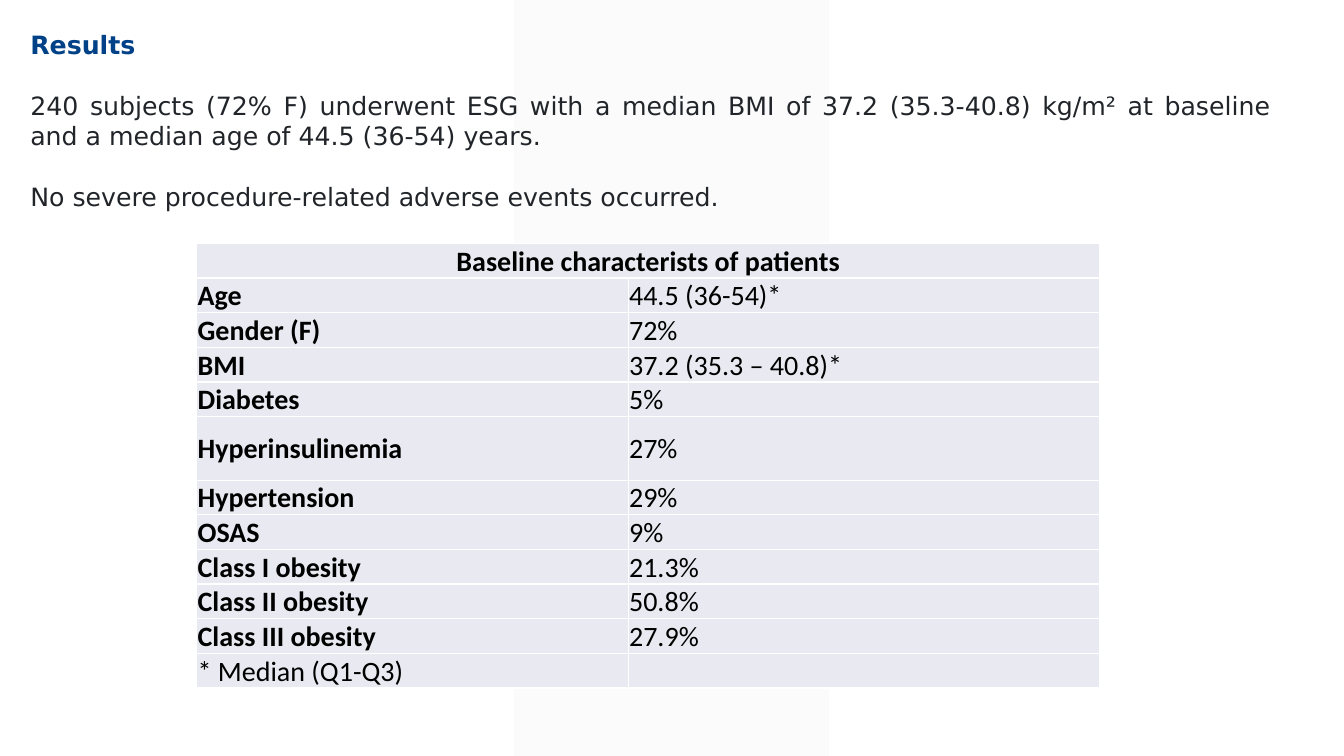
from lxml.etree import SubElement
from pptx import Presentation
from pptx.dml.color import RGBColor
from pptx.enum.shapes import MSO_SHAPE as Shape
from pptx.enum.text import MSO_ANCHOR as Anchor, PP_ALIGN as Align
from pptx.oxml.ns import qn
from pptx.util import Inches, Pt

COLORS = {
    "band": "F2F2F2",
    "heading": "004187",
    "body": "212529",
    "cell": "E9EAF1",
    "border": "FFFFFF",
    "table_text": "000000",
}
TABLE_TITLE = "Baseline characterists of patients"
CHARACTERISTICS = [
    ("Age", "44.5 (36-54)*"),
    ("Gender (F)", "72%"),
    ("BMI", "37.2 (35.3 – 40.8)*"),
    ("Diabetes", "5%"),
    ("Hyperinsulinemia", "27%"),
    ("Hypertension", "29%"),
    ("OSAS", "9%"),
    ("Class I obesity", "21.3%"),
    ("Class II obesity", "50.8%"),
    ("Class III obesity", "27.9%"),
]
FOOTNOTE = "* Median (Q1-Q3)"


def rgb(name):
    return RGBColor.from_string(COLORS[name])


def write(paragraph, text, *, font, size, color, bold=False,
          align=Align.LEFT, before=0):
    paragraph.alignment = align
    paragraph.space_before = Pt(before)
    run = paragraph.add_run()
    run.text = text
    run.font.name = font
    run.font.size = Pt(size)
    run.font.bold = bold
    run.font.color.rgb = rgb(color)


def set_insets(target, left, top, right, bottom):
    target.margin_left, target.margin_top = Inches(left), Inches(top)
    target.margin_right, target.margin_bottom = Inches(right), Inches(bottom)


class ResultsSlide:
    """Places elements by percentages of the slide's width and height."""

    body_style = dict(font="DejaVu Sans", size=18, color="body")
    table_style = dict(font="Calibri", size=20, color="table_text")

    def __init__(self, deck):
        self.deck = deck
        self.slide = deck.slides.add_slide(deck.slide_layouts[6])

    def across(self, percent):
        return round(self.deck.slide_width * percent / 100)

    def down(self, percent):
        return round(self.deck.slide_height * percent / 100)

    def box(self, x, y, width, height):
        return self.across(x), self.down(y), self.across(width), self.down(height)

    def band(self, *place, opacity):
        band = self.slide.shapes.add_shape(Shape.PARALLELOGRAM, *self.box(*place))
        band.adjustments[0] = 0
        band.shadow.inherit = False
        band.line.fill.background()
        band.fill.solid()
        band.fill.fore_color.rgb = rgb("band")
        tint = band.fill._xPr.find(".//" + qn("a:srgbClr"))
        SubElement(tint, qn("a:alpha"), val=str(opacity * 1000))

    def text(self, *place, paragraphs):
        frame = self.slide.shapes.add_textbox(*self.box(*place)).text_frame
        frame.word_wrap = True
        set_insets(frame, 0.09, 0.01, 0.04, 0.01)
        for i, (text, style) in enumerate(paragraphs):
            paragraph = frame.add_paragraph() if i else frame.paragraphs[0]
            write(paragraph, text, **{**self.body_style, **style})

    def style_cell(self, cell):
        cell.vertical_anchor = Anchor.MIDDLE
        set_insets(cell, 0.01, 0.01, 0.01, 0)
        properties = cell._tc.get_or_add_tcPr()
        for side in ("lnL", "lnR", "lnT", "lnB"):
            border = SubElement(properties, qn("a:" + side), w=str(Pt(1)))
            paint = SubElement(border, qn("a:solidFill"))
            SubElement(paint, qn("a:srgbClr"), val=COLORS["border"])
        cell.fill.solid()
        cell.fill.fore_color.rgb = rgb("cell")

    def table(self, x, y, *, columns, rows):
        place = self.box(x, y, sum(columns), sum(rows))
        table = self.slide.shapes.add_table(len(rows), len(columns), *place).table
        table.first_row = table.horz_banding = False
        for column, width in zip(table.columns, columns):
            column.width = self.across(width)
        for row, height in zip(table.rows, rows):
            row.height = self.down(height)
        for cell in table.iter_cells():
            self.style_cell(cell)
        return table

    def cell_text(self, cell, text, **style):
        write(cell.text_frame.paragraphs[0], text, **self.table_style, **style)


def main():
    deck = Presentation()
    deck.slide_width, deck.slide_height = Inches(13.33), Inches(7.5)
    results = ResultsSlide(deck)

    # Background band
    results.band(38.26, 0, 23.41, 100, opacity=30)

    # Heading and findings
    finding = dict(align=Align.JUSTIFY, before=22)
    results.text(1.58, 3.73, 93.32, 28.53, paragraphs=[
        ("Results", dict(color="heading", bold=True)),
        ("240 subjects (72% F) underwent ESG with a median BMI of 37.2 "
         "(35.3-40.8) kg/m² at baseline and a median age of 44.5 (36-54) years.",
         finding),
        ("No severe procedure-related adverse events occurred.", finding),
    ])

    # Baseline table: title, characteristics, footnote
    heights = [8.4 if label == "Hyperinsulinemia" else 4.53
               for label, _ in CHARACTERISTICS]
    baseline = results.table(14.63, 32.2, columns=[32.11, 35.11],
                             rows=[4.53, *heights, 4.53])
    title = baseline.cell(0, 0)
    title.merge(baseline.cell(0, 1))
    results.cell_text(title, TABLE_TITLE, bold=True, align=Align.CENTER)
    for row, (label, value) in enumerate(CHARACTERISTICS, start=1):
        results.cell_text(baseline.cell(row, 0), label, bold=True)
        results.cell_text(baseline.cell(row, 1), value)
    results.cell_text(baseline.cell(len(heights) + 1, 0), FOOTNOTE)

    deck.save("out.pptx")


if __name__ == "__main__":
    main()
